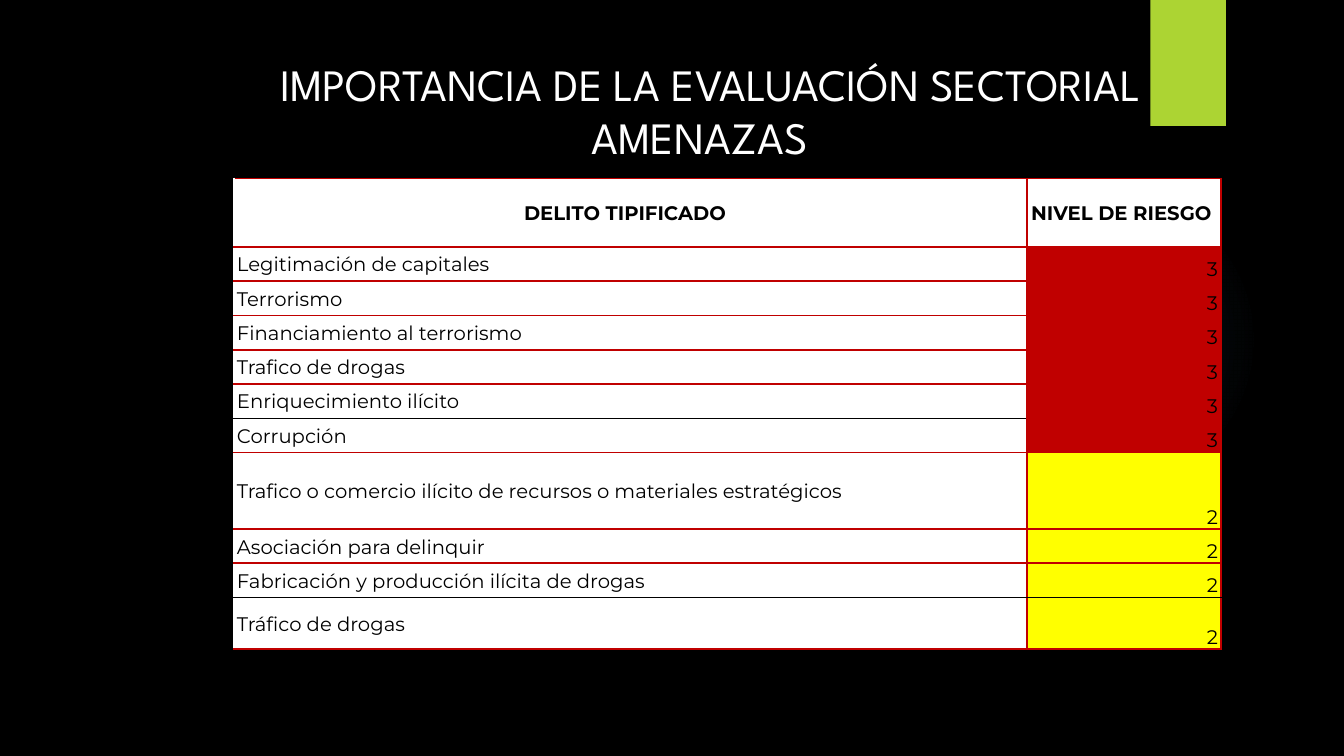
"""Build the slide that ranks the sector's threats by risk level."""
from lxml import etree
from pptx import Presentation
from pptx.dml.color import RGBColor
from pptx.enum.shapes import MSO_SHAPE
from pptx.enum.text import MSO_ANCHOR, PP_ALIGN
from pptx.oxml import parse_xml
from pptx.oxml.ns import nsdecls, qn
from pptx.util import Inches, Pt

RECTANGLE, OVAL = MSO_SHAPE.RECTANGLE, MSO_SHAPE.OVAL
MIDDLE, BOTTOM = MSO_ANCHOR.MIDDLE, MSO_ANCHOR.BOTTOM
LEFT, CENTER, RIGHT = PP_ALIGN.LEFT, PP_ALIGN.CENTER, PP_ALIGN.RIGHT

TITLE = " IMPORTANCIA DE LA EVALUACIÓN SECTORIAL AMENAZAS "
HEADERS = ("DELITO TIPIFICADO  ", "NIVEL DE RIESGO ")
THREATS = [
    ("Legitimación de capitales", 3),
    ("Terrorismo", 3),
    ("Financiamiento al terrorismo", 3),
    ("Trafico de drogas", 3),
    ("Enriquecimiento ilícito", 3),
    ("Corrupción", 3),
    ("Trafico o comercio ilícito de recursos o materiales estratégicos", 2),
    ("Asociación para delinquir", 2),
    ("Fabricación y producción ilícita de drogas", 2),
    ("Tráfico de drogas", 2),
]
COLUMN_WIDTHS = (7.87, 1.92)
ROW_HEIGHT = 0.34
SPECIAL_HEIGHTS = {0: 0.68, 7: 0.76, 10: 0.51}
THIN_BELOW = {(5, 0), (9, 0), (9, 1)}
GLOW_STOPS = ((0, 7), (36, 6), (69, 0))

THEME = {
    "background": "000000", "title": "FFFFFF", "ribbon": "ACD433",
    "glow": "7AC4F0", "text": "000000", "cell": "FFFFFF", "border": "C00000",
    "risk": {3: "C00000", 2: "FFFF00"},
    "title_font": "League Spartan", "table_font": "Montserrat",
    "title_size": 32, "table_size": 14, "border_width": 1.5, "thin_width": 0.5,
}


def color(name):
    return RGBColor.from_string(name)


def write(paragraph, text, font, size, fill, align, bold=False):
    paragraph.alignment = align
    run = paragraph.add_run()
    run.text = text
    run.font.name = font
    run.font.size = Pt(size)
    run.font.bold = bold
    run.font.color.rgb = color(fill)


def add_plain_shape(slide, kind, *box):
    shape = slide.shapes.add_shape(kind, *map(Inches, box))
    shape.shadow.inherit = False
    shape.line.fill.background()
    shape.fill.solid()
    shape.fill.fore_color.rgb = color(THEME["ribbon"])
    return shape


def add_glow(slide):
    glow = add_plain_shape(slide, OVAL, 9.41, 1.83, 3.08, 3.08)
    stops = "".join(
        f'<a:gs pos="{position * 1000}"><a:srgbClr val="{THEME["glow"]}">'
        f'<a:alpha val="{alpha * 1000}"/></a:srgbClr></a:gs>'
        for position, alpha in GLOW_STOPS)
    gradient = parse_xml(
        f'<a:gradFill {nsdecls("a")}><a:gsLst>{stops}</a:gsLst><a:path path="circle">'
        '<a:fillToRect l="50000" t="50000" r="50000" b="50000"/></a:path></a:gradFill>')
    properties = glow._element.spPr
    properties.replace(properties.find(qn("a:solidFill")), gradient)


def add_border(cell, side, fill, width):
    line = etree.SubElement(cell._tc.get_or_add_tcPr(), qn(f"a:ln{side}"), w=str(Pt(width)))
    solid = etree.SubElement(line, qn("a:solidFill"))
    etree.SubElement(solid, qn("a:srgbClr"), val=fill)


def style_borders(cell, row, column):
    for side in ("RTB", "LRTB")[column]:
        thin = (side == "B" and (row, column) in THIN_BELOW
                or side == "T" and (row - 1, column) in THIN_BELOW)
        if thin:
            add_border(cell, side, THEME["text"], THEME["thin_width"])
        else:
            add_border(cell, side, THEME["border"], THEME["border_width"])


def fill_cell(cell, row, column, value):
    style_borders(cell, row, column)
    cell.fill.solid()
    cell.fill.fore_color.rgb = color(THEME["risk"].get(value, THEME["cell"]))
    cell.margin_left = cell.margin_right = Inches(0.03)
    cell.margin_top = cell.margin_bottom = 0
    cell.vertical_anchor = BOTTOM if row and column else MIDDLE
    paragraph = cell.text_frame.paragraphs[0]
    paragraph.line_spacing = 1.07
    paragraph.space_after = Pt(6)
    align = (LEFT, RIGHT)[column] if row else CENTER
    write(paragraph, str(value), THEME["table_font"], THEME["table_size"],
          THEME["text"], align, bold=row == 0)


def add_threat_table(slide):
    rows = [HEADERS, *THREATS]
    heights = [SPECIAL_HEIGHTS.get(row, ROW_HEIGHT) for row in range(len(rows))]
    table = slide.shapes.add_table(
        len(rows), len(COLUMN_WIDTHS), Inches(2.32), Inches(1.77),
        Inches(sum(COLUMN_WIDTHS)), Inches(sum(heights))).table
    table.first_row = table.horz_banding = False
    for column, width in enumerate(COLUMN_WIDTHS):
        table.columns[column].width = Inches(width)
    for row, values in enumerate(rows):
        table.rows[row].height = Inches(heights[row])
        for column, value in enumerate(values):
            fill_cell(table.cell(row, column), row, column, value)


def main():
    presentation = Presentation()
    presentation.slide_width, presentation.slide_height = Inches(13.33), Inches(7.5)
    slide = presentation.slides.add_slide(presentation.slide_layouts[6])
    slide.background.fill.solid()
    slide.background.fill.fore_color.rgb = color(THEME["background"])
    add_glow(slide)
    add_plain_shape(slide, RECTANGLE, 11.41, 0, 0.75, 1.25)
    title = slide.shapes.add_textbox(Inches(2.32), Inches(0.51), Inches(9.35), Inches(1.18))
    title.text_frame.word_wrap = True
    write(title.text_frame.paragraphs[0], TITLE, THEME["title_font"],
          THEME["title_size"], THEME["title"], CENTER)
    add_threat_table(slide)
    presentation.save("out.pptx")


if __name__ == "__main__":
    main()
